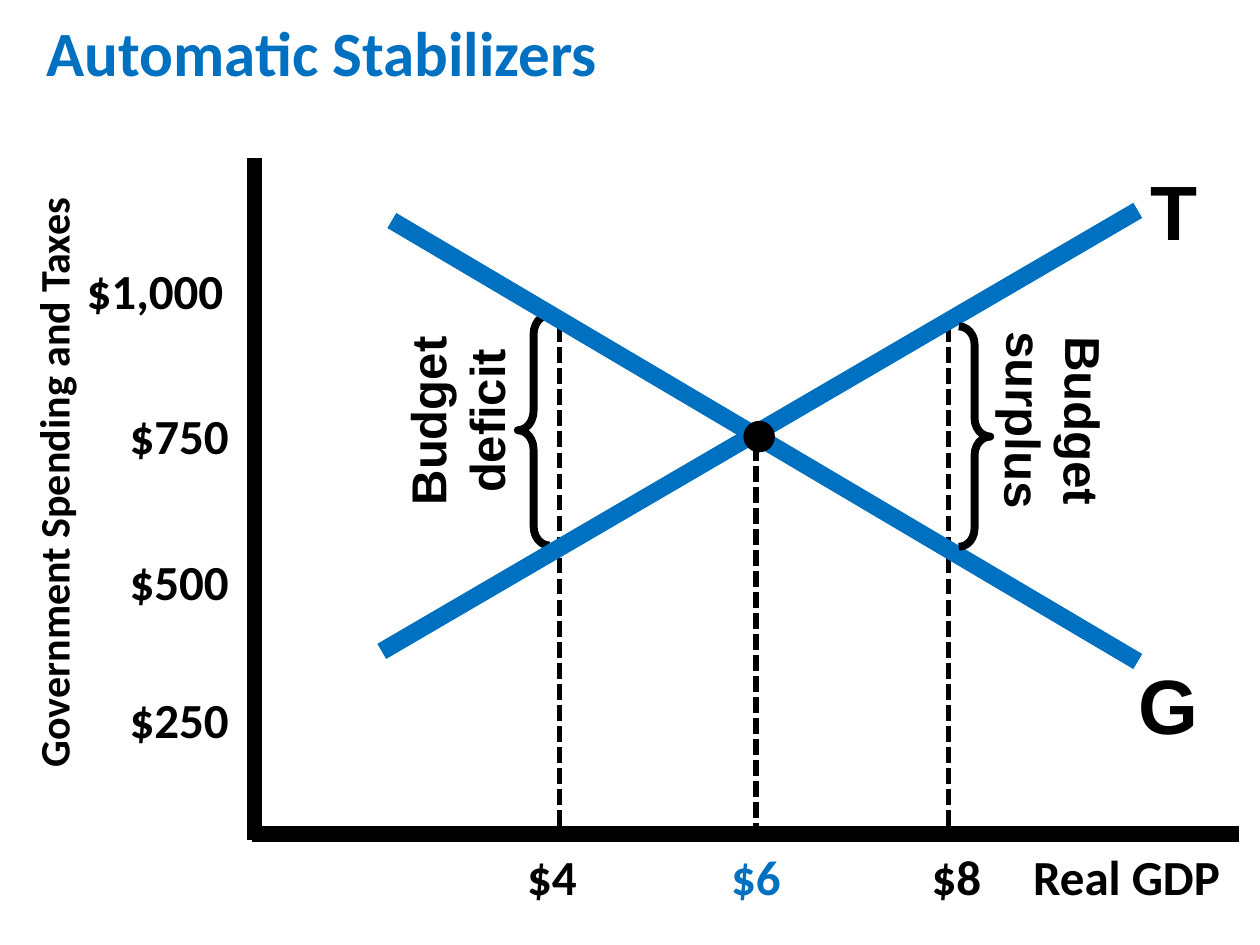
from dataclasses import dataclass

from lxml.etree import SubElement
from pptx import Presentation
from pptx.dml.color import RGBColor
from pptx.enum.dml import MSO_LINE
from pptx.enum.shapes import MSO_CONNECTOR, MSO_SHAPE
from pptx.enum.text import MSO_ANCHOR, MSO_AUTO_SIZE, PP_ALIGN
from pptx.oxml.ns import qn
from pptx.util import Pt

EMU_PER_PX = 9144


@dataclass(frozen=True)
class Theme:
    ink: RGBColor = RGBColor(0, 0, 0)
    accent: RGBColor = RGBColor(0x00, 0x70, 0xC0)
    paper: RGBColor = RGBColor(255, 255, 255)
    body_font: str = "Calibri"
    graph_font: str = "Arial"
    title_size: int = 36
    label_size: int = 28
    axis_title_size: int = 24
    curve_size: int = 44
    axis_width: float = 9
    curve_width: float = 10
    guide_width: float = 3
    brace_width: float = 4.5


@dataclass(frozen=True)
class Box:
    left: int
    top: int
    width: int
    height: int

    def inner(self, left, top, width, height):
        return Box(self.left + left, self.top + top, width, height)

    def emu(self):
        return [px(n) for n in (self.left, self.top, self.width, self.height)]


THEME = Theme()


def px(length):
    return length * EMU_PER_PX


def style_text(shape, text, size, font, color=THEME.ink, align=PP_ALIGN.CENTER):
    frame = shape.text_frame
    frame.word_wrap = True
    frame.auto_size = MSO_AUTO_SIZE.NONE
    frame.vertical_anchor = MSO_ANCHOR.TOP
    frame.text = text
    paragraph = frame.paragraphs[0]
    paragraph.alignment = align
    paragraph.font.name = font
    paragraph.font.size = Pt(size)
    paragraph.font.bold = True
    paragraph.font.color.rgb = color


def add_label(slide, box, text, size=THEME.label_size, font=THEME.body_font,
              color=THEME.ink, align=PP_ALIGN.CENTER, rotation=0):
    shape = slide.shapes.add_textbox(*box.emu())
    shape.rotation = rotation
    style_text(shape, text, size, font, color, align)


def add_line(slide, box, start, end, width, color=THEME.ink, dash=None):
    points = [px(n) for x, y in (start, end) for n in (box.left + x, box.top + y)]
    line = slide.shapes.add_connector(MSO_CONNECTOR.STRAIGHT, *points)
    line.line.color.rgb = color
    line.line.width = Pt(width)
    if dash:
        line.line.dash_style = dash
    SubElement(line._element.spPr, qn("a:effectLst"))


def add_title(slide, box):
    title = slide.shapes.title
    title.left, title.top, title.width, title.height = box.emu()
    title.fill.solid()
    title.fill.fore_color.rgb = THEME.paper
    style_text(title, "Automatic Stabilizers", THEME.title_size,
               THEME.body_font, THEME.accent, PP_ALIGN.LEFT)


def add_spending_labels(slide, box):
    for left, top, text in ((32, 0, "$1,000"), (66, 115, "$750"),
                            (66, 231, "$500"), (66, 340, "$250")):
        add_label(slide, box.inner(left, top, 150, 57), text, align=PP_ALIGN.LEFT)
    add_label(slide, box.inner(-260, 156, 550, 50), "Government Spending and Taxes",
              THEME.axis_title_size, rotation=270)


def add_gdp_labels(slide, box):
    for center, text, color in ((96, "$4", THEME.ink), (258, "$6", THEME.accent),
                                (417, "$8", THEME.ink), (552, "Real GDP", THEME.ink)):
        add_label(slide, box.inner(center - 100, 0, 200, 57), text, color=color)


def add_guides(slide, box):
    for x, top in ((244, 134), (400, 228), (553, 134)):
        add_line(slide, box, (x, top), (x, box.height), THEME.guide_width,
                 dash=MSO_LINE.SQUARE_DOT)


def add_axes(slide, box):
    add_line(slide, box, (2, 0), (2, box.height + 5), THEME.axis_width)
    add_line(slide, box, (0, box.height), (box.width, box.height), THEME.axis_width)


def add_curves(slide, box):
    for start, end in (((111, 50), (703, 400)), ((703, 42), (103, 392))):
        add_line(slide, box, start, end, THEME.curve_width, THEME.accent)
    for left, top, text in ((703, 0, "T"), (694, 392, "G")):
        add_label(slide, box.inner(left, top, 67, 84), text, THEME.curve_size,
                  THEME.graph_font, align=PP_ALIGN.LEFT)


def add_gap(slide, brace_box, label_box, kind, curl, text, rotation):
    brace = slide.shapes.add_shape(kind, *brace_box.emu())
    brace.shadow.inherit = False
    brace.adjustments[0] = curl
    brace.fill.background()
    brace.line.color.rgb = THEME.ink
    brace.line.width = Pt(THEME.brace_width)
    add_label(slide, label_box, text, font=THEME.graph_font, rotation=rotation)


def add_equilibrium(slide, box):
    dot = slide.shapes.add_shape(MSO_SHAPE.OVAL, *box.emu())
    dot.shadow.inherit = False
    dot.fill.solid()
    dot.fill.fore_color.rgb = THEME.ink
    dot.line.fill.background()


def add_graph(slide, box):
    add_guides(slide, box)
    add_axes(slide, box)
    add_gap(slide, box.inner(211, 125, 25, 183), box.inner(66, 162, 183, 94),
            MSO_SHAPE.LEFT_BRACE, 0.61, "Budget deficit", 270)
    add_curves(slide, box)
    add_gap(slide, box.inner(561, 134, 25, 175), box.inner(550, 162, 183, 94),
            MSO_SHAPE.RIGHT_BRACE, 0.58, "Budget surplus", 90.7)
    add_equilibrium(slide, box.inner(390, 209, 25, 25))


def main():
    presentation = Presentation()
    presentation.slide_width = px(1000)
    presentation.slide_height = px(750)
    slide = presentation.slides.add_slide(presentation.slide_layouts[5])
    add_title(slide, Box(27, 6, 587, 71))
    add_spending_labels(slide, Box(27, 202, 173, 397))
    add_gdp_labels(slide, Box(342, 667, 652, 57))
    add_graph(slide, Box(200, 125, 783, 537))
    presentation.save("out.pptx")


if __name__ == "__main__":
    main()
